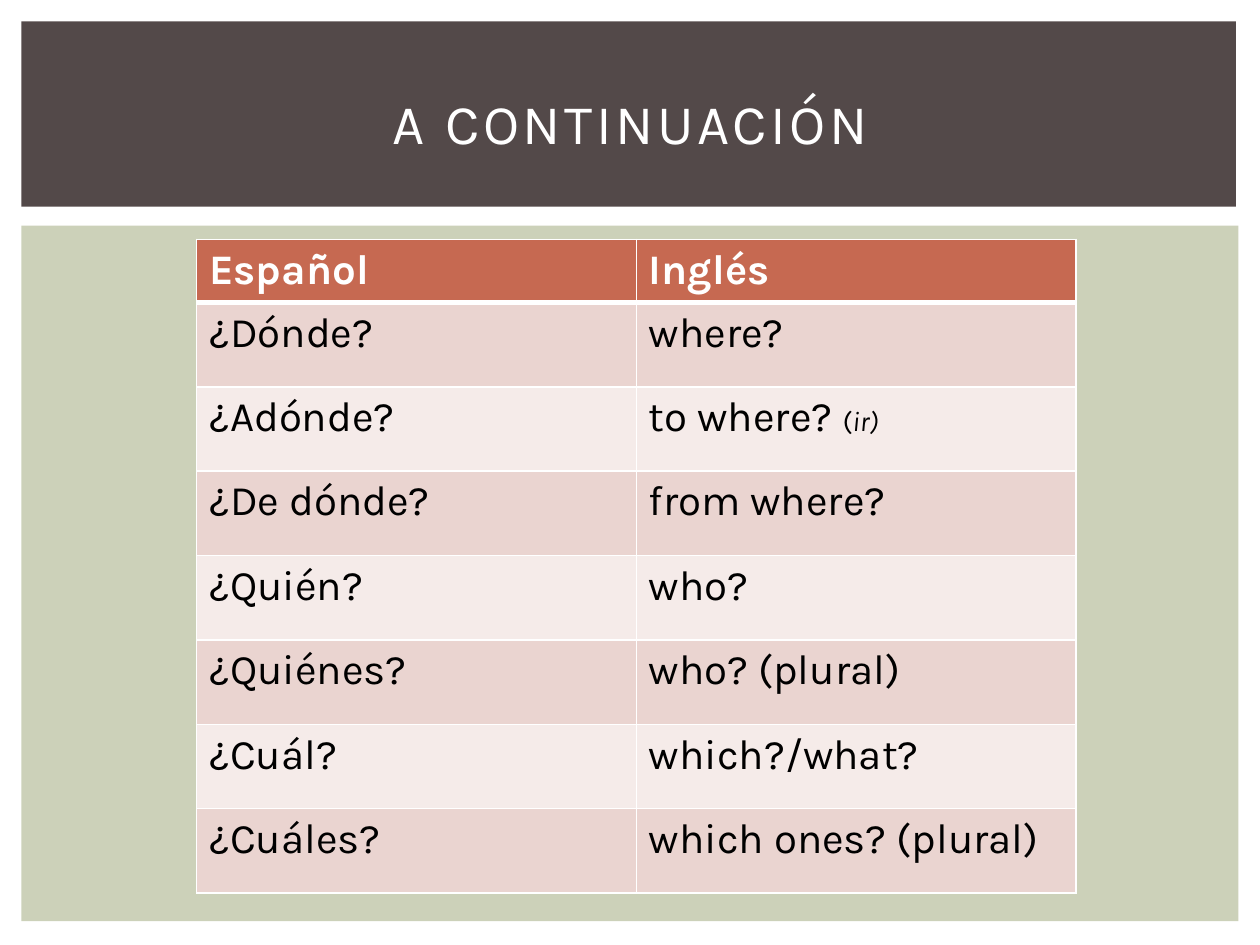
from lxml import etree
from pptx import Presentation
from pptx.dml.color import RGBColor
from pptx.enum.shapes import MSO_SHAPE
from pptx.enum.text import MSO_ANCHOR, PP_ALIGN
from pptx.oxml.ns import qn
from pptx.util import Inches, Pt

RECTANGLE = MSO_SHAPE.RECTANGLE
MIDDLE = MSO_ANCHOR.MIDDLE
CENTER = PP_ALIGN.CENTER

WHITE = RGBColor(0xFF, 0xFF, 0xFF)
BLACK = RGBColor(0x00, 0x00, 0x00)
BROWN = RGBColor(0x53, 0x49, 0x49)
SAGE = RGBColor(0xCC, 0xD1, 0xB9)
RUST = RGBColor(0xC6, 0x69, 0x51)
PINK = RGBColor(0xEA, 0xD4, 0xD0)
PALE_PINK = RGBColor(0xF5, 0xEB, 0xE9)
FONT = "Karla"

TITLE = "A CONTINUACIÓN"
HEADINGS = ("Español", "Inglés")
QUESTIONS = [
    ("¿Dónde?", "where?"),
    ("¿Adónde?", "to where? "),
    ("¿De dónde?", "from where?"),
    ("¿Quién?", "who?"),
    ("¿Quiénes?", "who? (plural)"),
    ("¿Cuál?", "which?/what?"),
    ("¿Cuáles?", "which ones? (plural)"),
]
VERB_HINT = {"to where? ": [("(", False), ("ir)", True)]}
PANELS = [
    (SAGE, (0.17, 1.79, 9.66, 5.52)),
    (BROWN, (0.17, 0.17, 9.64, 1.47)),
]
TITLE_BOX = (0.42, 0.39, 9.17, 1.15)
TABLE_LEFT, TABLE_TOP = 1.56, 1.9
COLUMN_WIDTH = 3.49
HEADING_HEIGHT, QUESTION_HEIGHT = 0.48, 0.67


def add_panel(slide, color, box):
    panel = slide.shapes.add_shape(RECTANGLE, *map(Inches, box))
    panel.shadow.inherit = False
    panel.fill.solid()
    panel.fill.fore_color.rgb = color
    panel.line.fill.background()


def set_font(font, size, color, bold=False):
    font.name = FONT
    font.size = Pt(size)
    font.color.rgb = color
    font.bold = bold


def add_title(slide):
    frame = slide.shapes.add_textbox(*map(Inches, TITLE_BOX)).text_frame
    frame.word_wrap = True
    frame.vertical_anchor = MIDDLE
    paragraph = frame.paragraphs[0]
    paragraph.alignment = CENTER
    run = paragraph.add_run()
    run.text = TITLE
    set_font(run.font, 32, WHITE)
    run.font._element.set("spc", "200")


def set_borders(cell, widths):
    properties = cell._tc.get_or_add_tcPr()
    for index, (side, width) in enumerate(widths.items()):
        line = etree.Element(qn(f"a:ln{side}"), w=str(Pt(width)))
        fill = etree.SubElement(line, qn("a:solidFill"))
        etree.SubElement(fill, qn("a:srgbClr"), val=str(WHITE))
        properties.insert(index, line)


def fill_cell(cell, text, row):
    heading = row == 0
    cell.fill.solid()
    cell.fill.fore_color.rgb = RUST if heading else (PALE_PINK, PINK)[row % 2]
    paragraph = cell.text_frame.paragraphs[0]
    set_font(paragraph.font, 24, WHITE if heading else BLACK, heading)
    paragraph.add_run().text = text
    for hint, italic in VERB_HINT.get(text, []):
        run = paragraph.add_run()
        run.text = hint
        run.font.size = Pt(16)
        run.font.italic = italic
    set_borders(cell, {"L": 1, "R": 1, "T": 3 if row == 1 else 1, "B": 3 if heading else 1})


def add_vocabulary(slide):
    entries = [HEADINGS, *QUESTIONS]
    heights = [HEADING_HEIGHT] + [QUESTION_HEIGHT] * len(QUESTIONS)
    size = (COLUMN_WIDTH * len(HEADINGS), sum(heights))
    table = slide.shapes.add_table(
        len(entries), len(HEADINGS), *map(Inches, (TABLE_LEFT, TABLE_TOP, *size))
    ).table
    for row, (entry, height) in enumerate(zip(entries, heights)):
        table.rows[row].height = Inches(height)
        for column, text in enumerate(entry):
            fill_cell(table.cell(row, column), text, row)


def main():
    deck = Presentation()
    deck.slide_width, deck.slide_height = Inches(10), Inches(7.5)
    slide = deck.slides.add_slide(deck.slide_layouts[6])
    for color, box in PANELS:
        add_panel(slide, color, box)
    add_title(slide)
    add_vocabulary(slide)
    deck.save("out.pptx")


if __name__ == "__main__":
    main()
